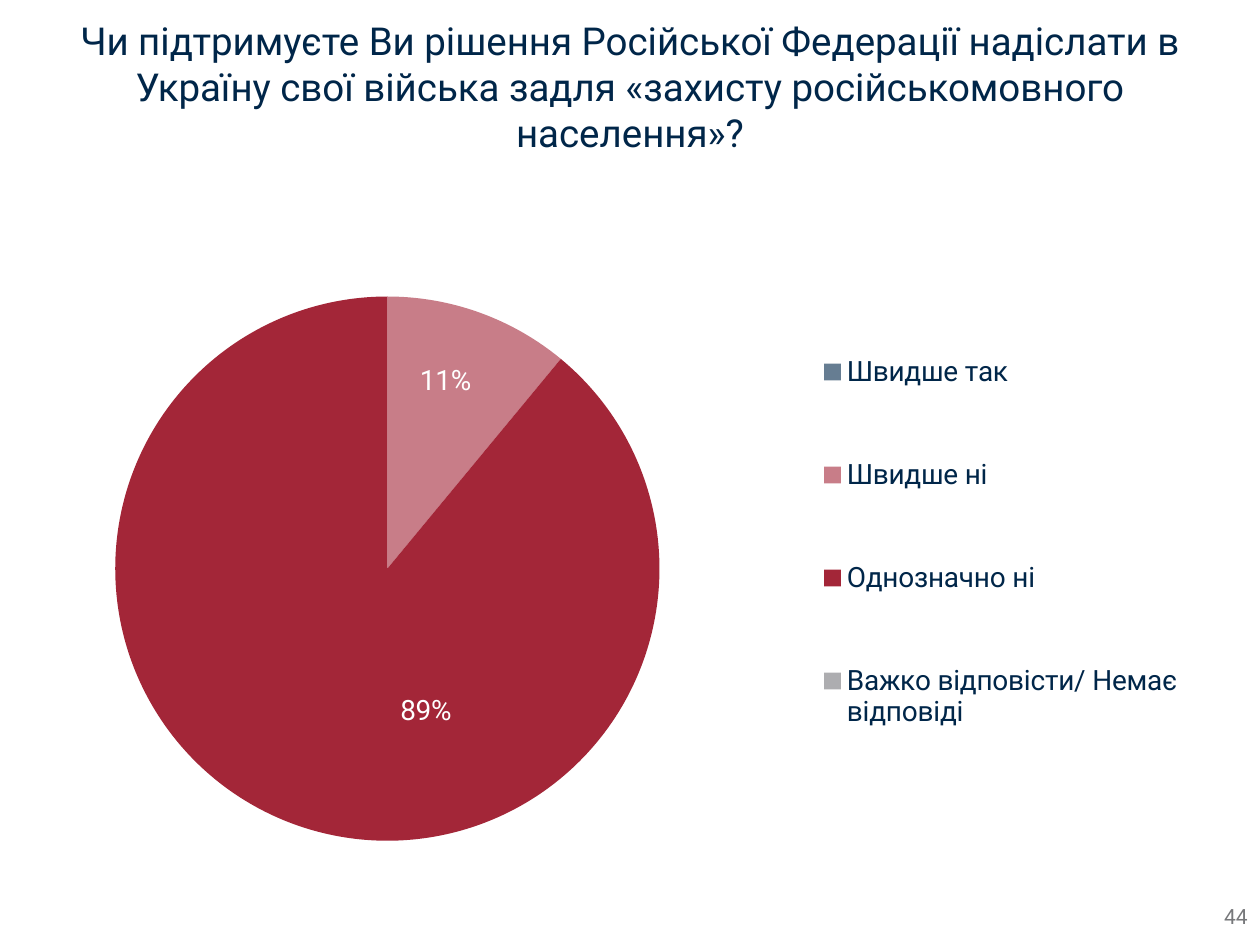
import pptx
import pptx.chart.data
import pptx.dml.color
import pptx.enum.chart
import pptx.enum.text
import pptx.oxml
import pptx.oxml.ns
import pptx.util

Inches = pptx.util.Inches
FONT = "Roboto"
NAVY = "002649"
ANSWERS = [
    ("Швидше так", 0, "667D92", None),
    ("Швидше нi", 11, "C87D88", (0.01, -0.08)),
    ("Однозначно нi", 89, "A32638", (0.07, 0.02)),
    ("Важко вiдповiсти/ Немає вiдповiдi", 0, "ADADB0", None),
]


def color(code):
    return pptx.dml.color.RGBColor.from_string(code)


def style(font, size, code):
    font.name = FONT
    font.size = pptx.util.Pt(size)
    font.color.rgb = color(code)


def write(slide, text, left, top, width, height, size=12, code=NAVY, align="CENTER"):
    box = slide.shapes.add_textbox(Inches(left), Inches(top), Inches(width), Inches(height))
    frame = box.text_frame
    frame.word_wrap = True
    frame.vertical_anchor = pptx.enum.text.MSO_ANCHOR.MIDDLE
    para = frame.paragraphs[0]
    para.alignment = pptx.enum.text.PP_ALIGN[align]
    run = para.add_run()
    run.text = text
    style(run.font, size, code)


def node(xml):
    tag, rest = xml.split(">", 1)
    return pptx.oxml.parse_xml(f"{tag} {pptx.oxml.ns.nsdecls('c')}>{rest}")


def layout(**parts):
    items = "".join(f'<c:{name} val="{value}"/>' for name, value in parts.items())
    return f"<c:layout><c:manualLayout>{items}</c:manualLayout></c:layout>"


def label(index, shift):
    if shift is None:
        body = '<c:delete val="1"/>'
    else:
        flags = "".join(
            f'<c:show{name} val="{int(name == "Percent")}"/>'
            for name in ("LegendKey", "Val", "CatName", "SerName", "Percent", "BubbleSize")
        )
        body = layout(x=shift[0], y=shift[1]) + '<c:dLblPos val="ctr"/>' + flags
    return node(f'<c:dLbl><c:idx val="{index}"/>{body}</c:dLbl>')


def add_pie(slide):
    data = pptx.chart.data.CategoryChartData()
    data.categories = [answer[0] for answer in ANSWERS]
    data.add_series("Series 1", [answer[1] for answer in ANSWERS])
    chart = slide.shapes.add_chart(
        pptx.enum.chart.XL_CHART_TYPE.PIE,
        Inches(0.31), Inches(1.5), Inches(9.6), Inches(5.84), data,
    ).chart
    style(chart.font, 10, "000000")
    chart.has_title = False
    chart.has_legend = True
    legend = chart.legend
    legend.position = pptx.enum.chart.XL_LEGEND_POSITION.RIGHT
    legend.include_in_layout = False
    style(legend.font, 16, NAVY)
    frame = layout(xMode="edge", yMode="edge", x=0.62, y=0.13, w=0.35, h=0.7)
    legend._element.find(pptx.oxml.ns.qn("c:legendPos")).addnext(node(frame))

    plot = chart.plots[0]
    plot.vary_by_categories = True
    area = plot._element.getparent()
    for old in area.findall(pptx.oxml.ns.qn("c:layout")):
        area.remove(old)
    area.insert(0, node(layout(
        layoutTarget="inner", xMode="edge", yMode="edge", x=0.063, y=0.146, w=0.45, h=0.74,
    )))

    series = plot.series[0]
    labels = series.data_labels
    labels.show_value = False
    labels.show_percentage = True
    labels.number_format = "0%"
    labels.number_format_is_linked = False
    labels.position = pptx.enum.chart.XL_LABEL_POSITION.CENTER
    style(labels.font, 16, "FFFFFF")
    for index, (name, value, code, shift) in enumerate(ANSWERS):
        fill = series.points[index].format.fill
        fill.solid()
        fill.fore_color.rgb = color(code)
        labels._element.insert(index, label(index, shift))


def main():
    deck = pptx.Presentation()
    deck.slide_width = Inches(10)
    deck.slide_height = Inches(7.5)
    slide = deck.slides.add_slide(deck.slide_layouts[6])
    write(
        slide,
        "Чи підтримуєте Ви рішення Російської Федерації надіслати в Україну "
        "свої війська задля «захисту російськомовного населення»?",
        0.31, 0.52, 9.38, 0.33, size=22,
    )
    add_pie(slide)
    write(slide, "44", 7.75, 7.07, 2.25, 0.4, code="77787B", align="RIGHT")
    deck.save("out.pptx")


if __name__ == "__main__":
    main()
